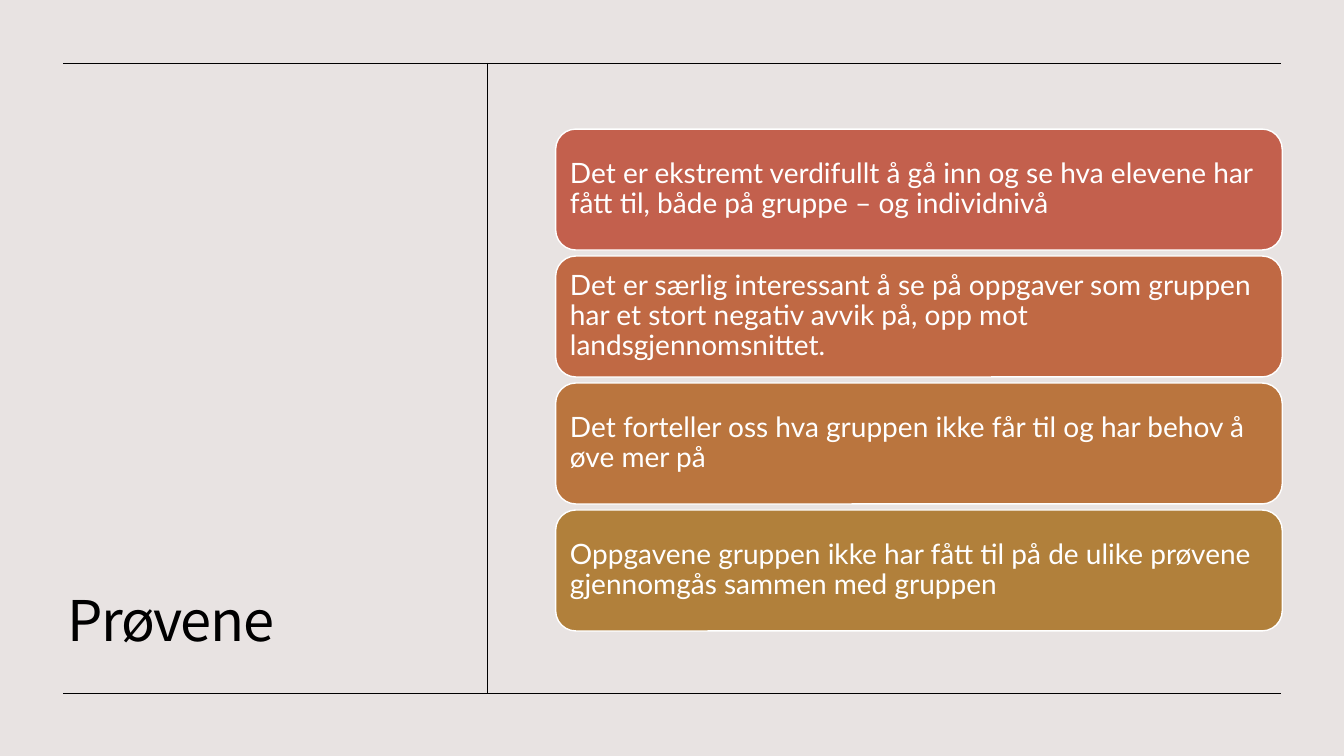
from pptx import Presentation
from pptx.dml.color import RGBColor
from pptx.enum.shapes import MSO_CONNECTOR, MSO_SHAPE
from pptx.enum.text import MSO_ANCHOR, MSO_AUTO_SIZE, PP_ALIGN
from pptx.oxml.ns import qn
from pptx.util import Pt
from lxml.etree import SubElement

COLORS = {
    "background": "E8E3E2",
    "ink": "000000",
    "white": "FFFFFF",
    "red": "C3604D",
    "rust": "C06944",
    "orange": "BA753E",
    "ochre": "B1803B",
}

CARDS = [
    ("red", "Det er ekstremt verdifullt å gå inn og se hva elevene har fått til, "
            "både på gruppe – og individnivå"),
    ("rust", "Det er særlig interessant å se på oppgaver som gruppen har et stort "
             "negativ avvik på, opp mot landsgjennomsnittet."),
    ("orange", "Det forteller oss hva gruppen ikke får til og har behov å øve mer på"),
    ("ochre", "Oppgavene gruppen ikke har fått til på de ulike prøvene gjennomgås "
              "sammen med gruppen"),
]


class SlideBuilder:
    title_font = "Noto Sans CJK KR"
    body_font = "Lato"

    def __init__(self, prs):
        self.s = prs.slides.add_slide(prs.slide_layouts[5])
        fill = self.s.background.fill
        fill.solid()
        fill.fore_color.rgb = self.color("background")

    def color(self, name):
        return RGBColor.from_string(COLORS[name])

    def text(self, tf, text, font, size, color, anchor):
        tf.word_wrap = True
        tf.auto_size = MSO_AUTO_SIZE.NONE
        tf.vertical_anchor = anchor
        p = tf.paragraphs[0]
        p.alignment = PP_ALIGN.LEFT
        p.line_spacing = 0.9
        r = p.add_run()
        r.text = text
        r.font.name = font
        r.font.size = Pt(size)
        r.font.color.rgb = self.color(color)
        return r

    def title(self, text, x, y, w, h):
        sp = self.s.shapes.title
        sp.left, sp.top, sp.width, sp.height = Pt(x), Pt(y), Pt(w), Pt(h)
        r = self.text(sp.text_frame, text, self.title_font, 40, "ink", MSO_ANCHOR.BOTTOM)
        r.font._element.set("spc", "-100")

    def line(self, x1, y1, x2, y2):
        c = self.s.shapes.add_connector(
            MSO_CONNECTOR.STRAIGHT, Pt(x1), Pt(y1), Pt(x2), Pt(y2))
        c.line.color.rgb = self.color("ink")
        c.line.width = Pt(0.5)
        SubElement(c._element.spPr, qn("a:effectLst"))

    def card(self, text, fill, x, y, w, h):
        sp = self.s.shapes.add_shape(
            MSO_SHAPE.ROUNDED_RECTANGLE, Pt(x), Pt(y), Pt(w), Pt(h))
        sp.shadow.inherit = False
        sp.fill.solid()
        sp.fill.fore_color.rgb = self.color(fill)
        sp.line.color.rgb = self.color("white")
        sp.line.width = Pt(1)
        tf = sp.text_frame
        tf.margin_left = tf.margin_right = tf.margin_top = tf.margin_bottom = Pt(6)
        self.text(tf, text, self.body_font, 20, "white", MSO_ANCHOR.MIDDLE)


def main():
    prs = Presentation()
    prs.slide_width, prs.slide_height = Pt(960), Pt(540)
    slide = SlideBuilder(prs)
    slide.title("Prøvene", 41, 71.3, 275.8, 398.9)

    left, right, top, bottom, divider = 45, 915, 45, 495, 348
    slide.line(right, bottom, left, bottom)
    slide.line(divider, top, divider, bottom)
    slide.line(right, top, left, top)

    card_top, card_height, gap = 92.2, 86.4, 4.3
    for i, (fill, text) in enumerate(CARDS):
        y = card_top + i * (card_height + gap)
        slide.card(text, fill, 396.9, y, 519, card_height)

    prs.save("out.pptx")


if __name__ == "__main__":
    main()
